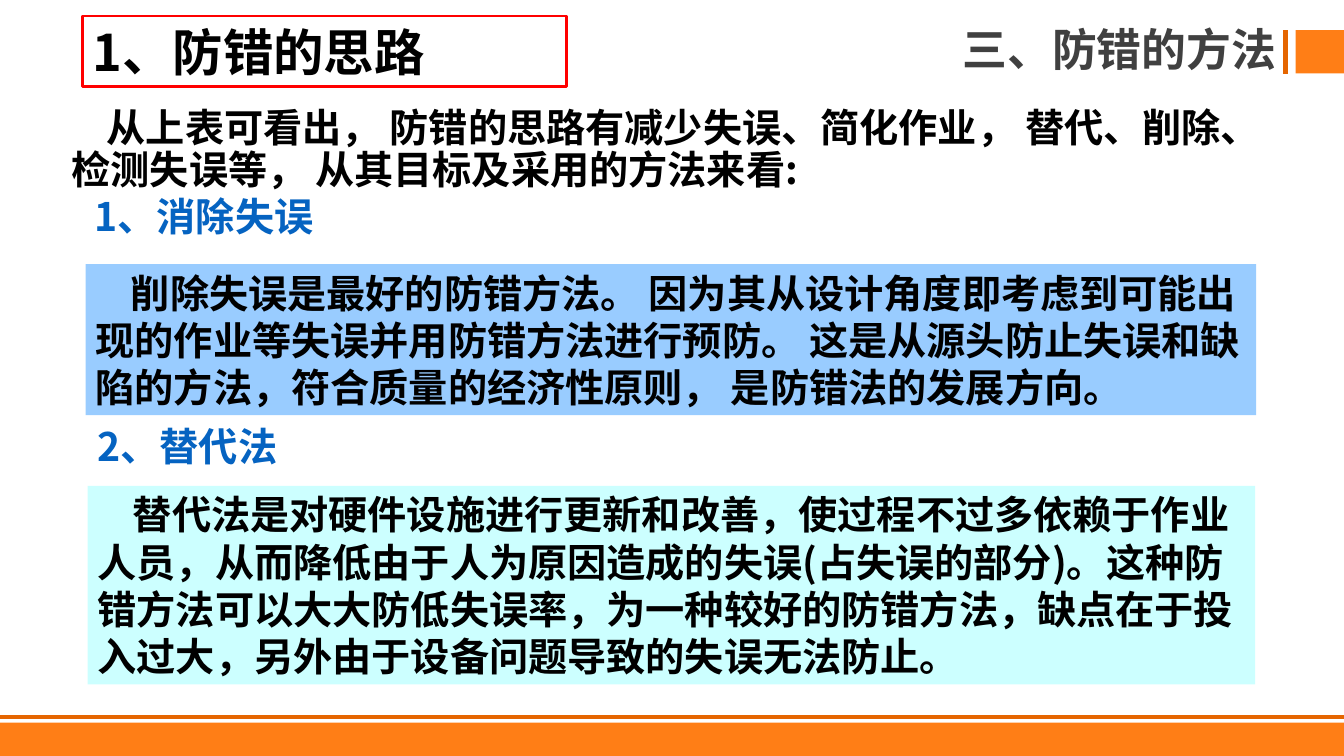
from dataclasses import dataclass

from lxml.etree import SubElement
from pptx import Presentation
from pptx.dml.color import RGBColor
from pptx.enum.lang import MSO_LANGUAGE_ID
from pptx.enum.shapes import MSO_CONNECTOR, MSO_SHAPE
from pptx.enum.text import MSO_ANCHOR, MSO_AUTO_SIZE, PP_ALIGN
from pptx.oxml.ns import qn
from pptx.util import Inches, Pt


@dataclass(frozen=True)
class Theme:
    font: str = "Noto Sans CJK SC"
    orange: str = "FF7E16"
    dark_orange: str = "E56500"
    red: str = "FF0000"
    black: str = "000000"
    grey: str = "404040"
    link_blue: str = "0563C1"
    light_blue: str = "99CCFF"
    light_cyan: str = "CCFFFF"
    section_size: int = 32
    heading_size: int = 36
    body_size: int = 28


THEME = Theme()
FIRST_LINE = 0.35


def rgb(value):
    return RGBColor.from_string(value)


def set_text(sp, text, color=THEME.black, size=THEME.body_size,
             anchor=MSO_ANCHOR.TOP, indent=0, **paragraph_format):
    tf = sp.text_frame
    frame_format = {"word_wrap": True, "auto_size": MSO_AUTO_SIZE.NONE,
                    "vertical_anchor": anchor}
    for name, value in frame_format.items():
        setattr(tf, name, value)
    p = tf.paragraphs[0]
    for name, value in {"alignment": PP_ALIGN.LEFT, **paragraph_format}.items():
        setattr(p, name, value)
    if indent:
        p._p.get_or_add_pPr().set("indent", str(Inches(indent)))
    r = p.add_run()
    r.text = text
    font_format = {"name": THEME.font, "size": Pt(size), "bold": True,
                   "language_id": MSO_LANGUAGE_ID.SIMPLIFIED_CHINESE}
    for name, value in font_format.items():
        setattr(r.font, name, value)
    r.font.color.rgb = rgb(color)
    SubElement(r.font._element, qn("a:ea"), typeface=THEME.font)


def add_box(s, box, fill=None, outline=None):
    sp = s.shapes.add_shape(MSO_SHAPE.RECTANGLE, *map(Inches, box))
    sp.shadow.inherit = False
    if fill:
        sp.fill.solid()
        sp.fill.fore_color.rgb = rgb(fill)
    else:
        sp.fill.background()
    if outline:
        sp.line.color.rgb = rgb(outline)
        sp.line.width = Pt(2)
    else:
        sp.line.fill.background()
    return sp


def add_rule(s, *ends):
    line = s.shapes.add_connector(MSO_CONNECTOR.STRAIGHT, *map(Inches, ends))
    line.line.color.rgb = rgb(THEME.dark_orange)
    line.line.width = Pt(3)
    SubElement(line._element.spPr, qn("a:effectLst"))


def add_label(s, box, text, **text_format):
    sp = s.shapes.add_textbox(*map(Inches, box))
    set_text(sp, text, line_spacing=0.9, **text_format)


def place_title(s, box, text):
    sp = s.shapes.title
    for name, value in zip(("left", "top", "width", "height"), box):
        setattr(sp, name, Inches(value))
    set_text(sp, text, anchor=MSO_ANCHOR.MIDDLE, indent=FIRST_LINE, line_spacing=0.9)


def main():
    prs = Presentation()
    prs.slide_width, prs.slide_height = Inches(13.33), Inches(7.5)
    s = prs.slides.add_slide(prs.slide_layouts[5])

    # Footer band and section marker
    add_box(s, (0, 7.17, 13.33, 0.33), THEME.orange)
    add_rule(s, 0, 7.11, 13.33, 7.11)
    add_box(s, (12.85, 0.3, 0.48, 0.43), THEME.orange)
    add_rule(s, 12.75, 0.73, 12.75, 0.3)
    add_label(s, (5.85, 0.23, 6.91, 0.53), "三、防错的方法", color=THEME.grey,
              size=THEME.section_size, alignment=PP_ALIGN.RIGHT)

    # Framed heading and introduction
    frame = add_box(s, (0.82, 0.16, 4.8, 0.7), outline=THEME.red)
    set_text(frame, "1、防错的思路", size=THEME.heading_size)
    place_title(s, (0.61, 0.87, 12.15, 1.25),
                "从上表可看出， 防错的思路有减少失误、简化作业， 替代、削除、"
                "检测失误等， 从其目标及采用的方法来看:")

    # Methods: a label above a coloured panel
    methods = [
        ("1、消除失误", (0.84, 1.91, 3.13, 0.6), MSO_ANCHOR.TOP,
         (0.85, 2.62, 11.61, 1.5), THEME.light_blue,
         "削除失误是最好的防错方法。 因为其从设计角度即考虑到可能出现的作业等失误"
         "并用防错方法进行预防。 这是从源头防止失误和缺陷的方法，符合质量的经济性"
         "原则， 是防错法的发展方向。"),
        ("2、替代法", (0.87, 4.11, 3.16, 0.69), MSO_ANCHOR.MIDDLE,
         (0.87, 4.82, 11.58, 1.97), THEME.light_cyan,
         "替代法是对硬件设施进行更新和改善，使过程不过多依赖于作业人员，从而降低"
         "由于人为原因造成的失误(占失误的部分)。这种防错方法可以大大防低失误率，"
         "为一种较好的防错方法，缺点在于投入过大，另外由于设备问题导致的失误无法防止。"),
    ]
    for label, label_box, anchor, panel_box, fill, text in methods:
        add_label(s, label_box, label, color=THEME.link_blue, anchor=anchor)
        set_text(add_box(s, panel_box, fill), text, indent=FIRST_LINE)

    prs.save("out.pptx")


if __name__ == "__main__":
    main()
